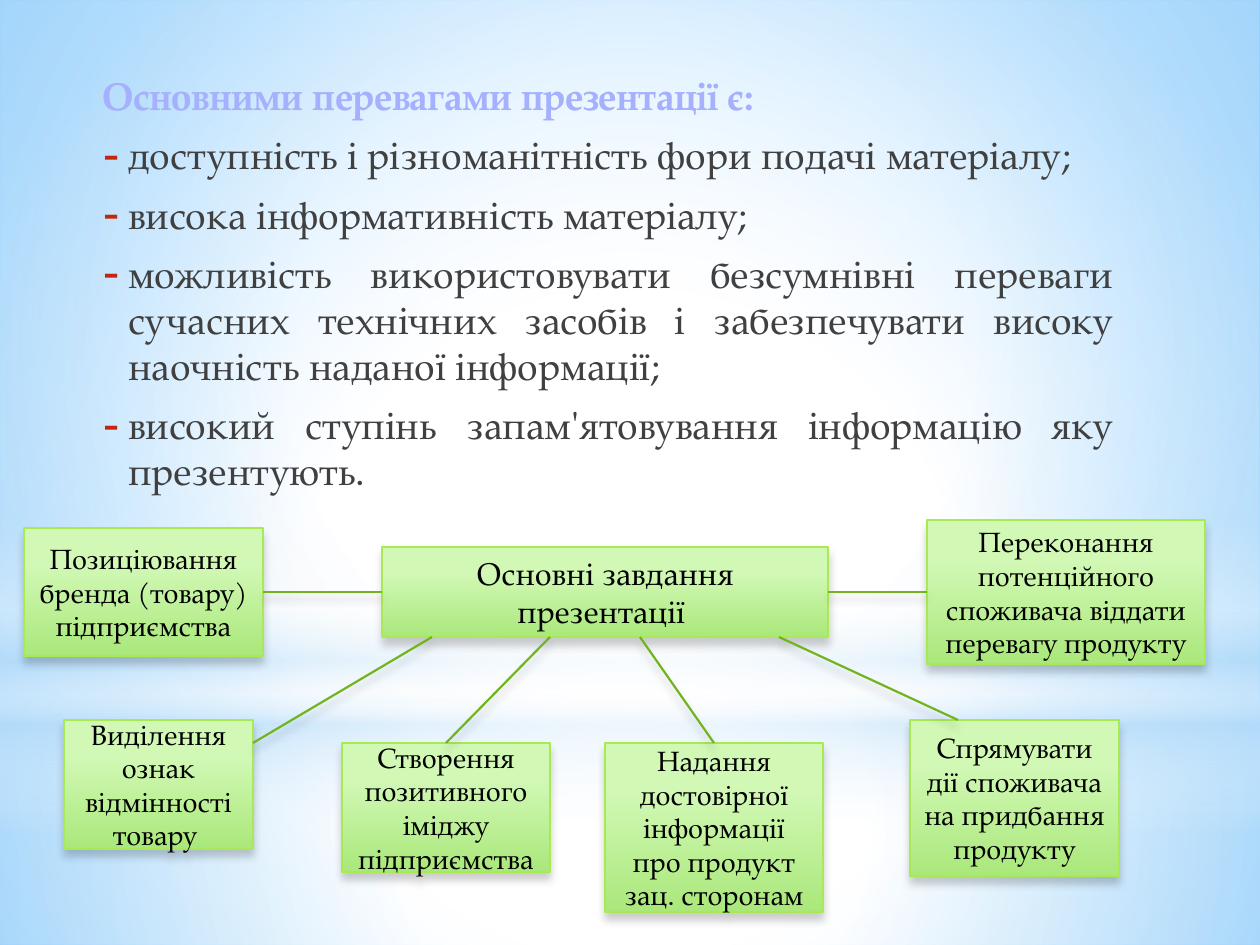
from dataclasses import dataclass
from typing import Optional

from pptx import Presentation
from pptx.dml.color import RGBColor
from pptx.enum.shapes import MSO_CONNECTOR as Conn, MSO_SHAPE as Kind
from pptx.enum.text import MSO_ANCHOR as Anchor, MSO_AUTO_SIZE as Auto, PP_ALIGN as Align
from pptx.oxml import parse_xml
from pptx.oxml.ns import nsdecls, qn
from pptx.util import Emu, Inches, Pt

FONT = "TeX Gyre Pagella"
NS = nsdecls("a")
TOP, LEFT, BOTTOM, RIGHT = range(4)
MID = (50, 50, 50, 50)


@dataclass
class Wash:
    """A soft layer of the backdrop; stops are (place, colour, opacity)."""
    kind: Kind
    area: tuple
    stops: list
    ang: Optional[int] = None


@dataclass
class Box:
    area: tuple
    text: str
    size: int = 16


@dataclass
class Link:
    """A line; src and dst are (box name, side) where it is joined."""
    start: tuple
    stop: tuple
    src: Optional[tuple] = None
    dst: Optional[tuple] = None


WASHES = [
    Wash(Kind.RECTANGLE, (0, 703, 1260, 242),
         [(0, "FFFFFF", 91), (37, "FFFFFF", 76), (100, "B4DCFA", 79)]),
    Wash(Kind.RECTANGLE, (0, 0, 1260, 703),
         [(0, "FFFFFF", 89), (48, "FFFFFF", 62), (100, "B4DCFA", 79)]),
    Wash(Kind.RECTANGLE, (0, 519, 1260, 315),
         [(0, "FFFFFF", 0), (29, "FFFFFF", 30), (45, "B4DCFA", 40),
          (55, "FFFFFF", 26), (65, "B4DCFA", 60), (100, "FFFFFF", 0)], 90),
    Wash(Kind.OVAL, (0, 220, 1260, 703), [(0, "FFFFFF", 100), (56, "FFFFFF", 0)]),
]
HEAD = "Основними перевагами презентації є:"
POINTS = [
    "доступність і різноманітність фори подачі матеріалу;",
    "висока інформативність матеріалу;",
    "можливість використовувати безсумнівні переваги сучасних технічних "
    "засобів і забезпечувати високу наочність наданої інформації;",
    "високий ступінь запам'ятовування інформацію яку презентують. ",
]
BOXES = {
    "main": Box((382, 547, 446, 90), "Основні завдання презентації ", 18),
    "brand": Box((24, 528, 239, 128), "Позиціювання бренда (товару) підприємства"),
    "traits": Box((64, 720, 189, 129), "Виділення ознак відмінності товару "),
    "image": Box((342, 743, 208, 129), "Створення позитивного іміджу підприємства"),
    "facts": Box((605, 743, 218, 169),
                 "Надання достовірної інформації про продукт зац. сторонам"),
    "sway": Box((927, 520, 278, 144),
                "Переконання потенційного споживача віддати перевагу продукту"),
    "buy": Box((910, 720, 209, 156), "Спрямувати дії споживача на придбання продукту"),
}
LINKS = [
    Link((263, 592), (382, 592), ("brand", RIGHT), ("main", LEFT)),
    Link((927, 592), (828, 592), ("sway", LEFT), ("main", RIGHT)),
    Link((253, 743), (432, 637)),
    Link((958, 720), (779, 637)),
    Link((446, 743), (550, 637), ("image", TOP)),
    Link((714, 743), (640, 637), ("facts", TOP)),
]


def px(n: int) -> Emu:
    return Emu(round(n * 914400 / 126))


def hue(code: str) -> RGBColor:
    return RGBColor.from_string(code)


def style(thing, form: dict) -> None:
    for key, value in form.items():
        setattr(thing, key, value)


def blend(fill, node, stops: list, ang: Optional[int] = None, to: tuple = MID) -> None:
    """Give node a gradient: linear if ang is set, else circular around to."""
    marks = "".join(
        f'<a:gs pos="{at * 1000}"><a:srgbClr val="{code}">'
        f'<a:alpha val="{seen * 1000}"/></a:srgbClr></a:gs>'
        for at, code, seen in stops)
    if ang is None:
        sides = " ".join(f'{side}="{n * 1000}"' for side, n in zip("ltrb", to))
        way = f'<a:path path="circle"><a:fillToRect {sides}/></a:path>'
    else:
        way = f'<a:lin ang="{ang * 60000}" scaled="0"/>'
    fill.solid()
    node.replace(node.find(qn("a:solidFill")), parse_xml(
        f'<a:gradFill {NS} rotWithShape="1"><a:gsLst>{marks}</a:gsLst>{way}</a:gradFill>'))


def shade(part) -> None:
    part._element.spPr.append(parse_xml(
        f'<a:effectLst {NS}><a:outerShdw blurRad="{Pt(5)}" dist="{Pt(4)}" dir="5400000" '
        'rotWithShape="0"><a:srgbClr val="000000"><a:alpha val="20000"/></a:srgbClr>'
        '</a:outerShdw></a:effectLst>'))


def add_wash(shapes, wash: Wash) -> None:
    layer = shapes.add_shape(wash.kind, *map(px, wash.area))
    layer.shadow.inherit = False
    layer.line.fill.background()
    blend(layer.fill, layer._element.spPr, wash.stops, wash.ang)


def add_line(para, text: str, bullet: bool):
    """Write one paragraph of the body and return its run."""
    style(para, {"alignment": Align.JUSTIFY, "space_after": Pt(3)})
    props = para._p.get_or_add_pPr()
    props.set("marL", str(Inches(0.25 if bullet else 0.05)))
    props.set("indent", str(Inches(-0.2 if bullet else 0)))
    props.insert(0, parse_xml(f'<a:spcBef {NS}><a:spcPct val="20000"/></a:spcBef>'))
    marks = ['<a:buClr {}><a:srgbClr val="C3260C"/></a:buClr>',
             '<a:buSzPct {} val="130000"/>', '<a:buChar {} char="-"/>']
    for mark in marks if bullet else ["<a:buNone {}/>"]:
        props.append(parse_xml(mark.format(NS)))
    run = para.add_run()
    run.text = text
    style(run.font, {"name": FONT, "size": Pt(22), "bold": not bullet})
    return run


def fill_body(body) -> None:
    style(body, dict(zip(("left", "top", "width", "height"), map(px, (84, 66, 1042, 479)))))
    frame = body.text_frame
    style(frame, {"auto_size": Auto.NONE, "word_wrap": True, "vertical_anchor": Anchor.TOP})
    font = add_line(frame.paragraphs[0], HEAD, False).font
    blend(font.fill, font._element,
          [(0, "BCC4FF", 100), (9, "A5B0FF", 100), (50, "001C8A", 100),
           (79, "A5B0FF", 100), (100, "BCC4FF", 100)], 90)
    font._element.insert(0, parse_xml(
        f'<a:ln {NS} w="{Pt(0.83)}"><a:solidFill><a:srgbClr val="445EC3"/></a:solidFill></a:ln>'))
    for text in POINTS:
        add_line(frame.add_paragraph(), text, True).font.color.rgb = hue("404040")


def add_box(shapes, box: Box):
    shape = shapes.add_shape(Kind.RECTANGLE, *map(px, box.area))
    blend(shape.fill, shape._element.spPr, [(28, "D1F8B5", 100), (100, "AAE87B", 100)], 90)
    shape.line.color.rgb = hue("A7EA52")
    shape.line.width = Pt(0.75)
    shade(shape)
    style(shape.text_frame, {"word_wrap": True, "vertical_anchor": Anchor.MIDDLE})
    para = shape.text_frame.paragraphs[0]
    para.alignment = Align.CENTER
    run = para.add_run()
    run.text = box.text
    style(run.font, {"name": FONT, "size": Pt(box.size)})
    run.font.color.rgb = hue("000000")
    return shape


def add_link(shapes, link: Link, made: dict) -> None:
    line = shapes.add_connector(Conn.STRAIGHT, *map(px, link.start + link.stop))
    for join, end in ((line.begin_connect, link.src), (line.end_connect, link.dst)):
        if end:
            join(made[end[0]], end[1])
    line.line.color.rgb = hue("72B41D")
    line.line.width = Pt(1.25)
    shade(line)


def main() -> None:
    deck = Presentation()
    style(deck, {"slide_width": px(1260), "slide_height": px(945)})
    slide = deck.slides.add_slide(deck.slide_layouts[1])
    shapes = slide.shapes
    title = shapes.title._element
    title.getparent().remove(title)

    # Backdrop
    fill = slide.background.fill
    fill.solid()
    blend(fill, slide._element.find(".//" + qn("p:bgPr")),
          [(0, "FFFFFF", 100), (42, "FFFFFF", 100), (100, "63BCFF", 100)], to=(24, 44, 24, 12))
    for wash in WASHES:
        add_wash(shapes, wash)

    # Benefits list, in front of the backdrop
    body = slide.placeholders[1]
    shapes._spTree.append(body._element)
    fill_body(body)

    # Task diagram
    made = {name: add_box(shapes, box) for name, box in BOXES.items()}
    for link in LINKS:
        add_link(shapes, link, made)

    deck.save("out.pptx")


if __name__ == "__main__":
    main()
